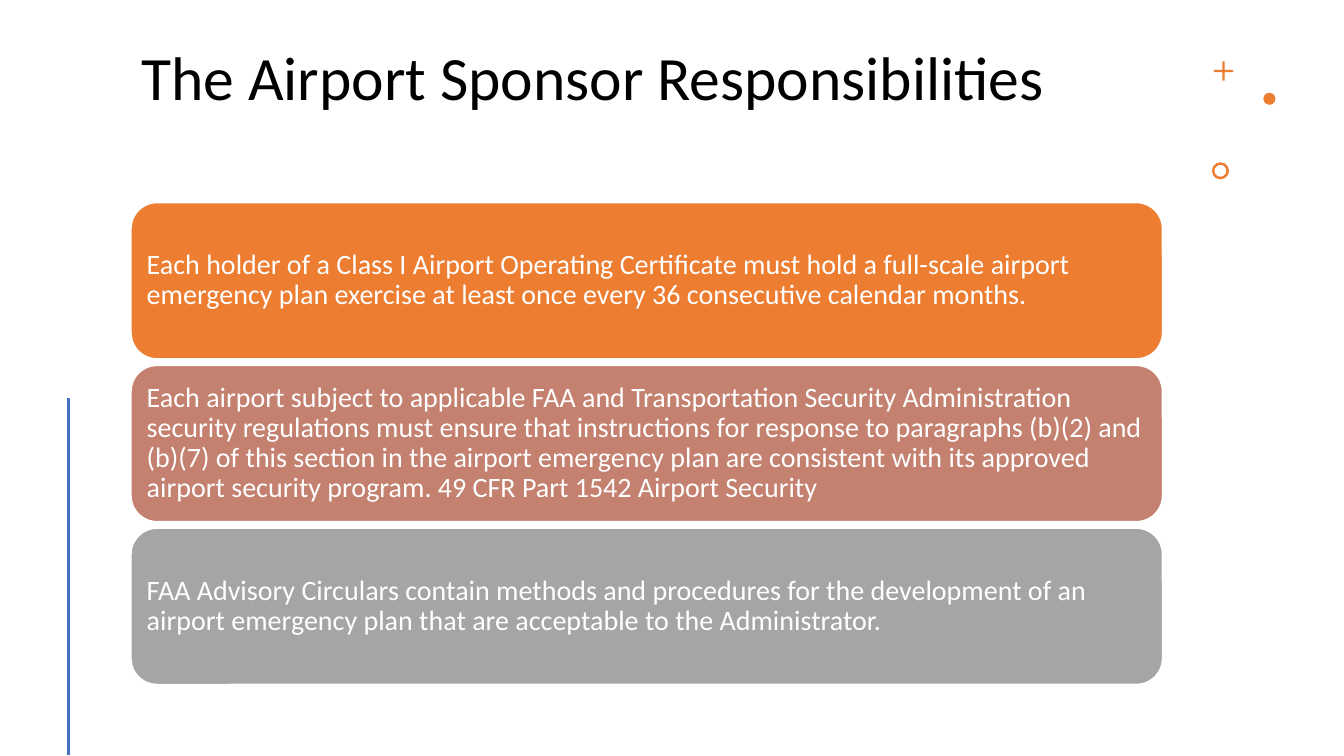
"""Build the airport sponsor responsibilities slide."""
from lxml import etree
from pptx import Presentation
from pptx.dml.color import RGBColor
from pptx.enum.shapes import MSO_CONNECTOR, MSO_SHAPE
from pptx.enum.text import MSO_ANCHOR, MSO_AUTO_SIZE, PP_ALIGN
from pptx.oxml.ns import qn
from pptx.util import Inches, Pt

CROSS, OVAL, DONUT = MSO_SHAPE.CROSS, MSO_SHAPE.OVAL, MSO_SHAPE.DONUT
CARD = MSO_SHAPE.ROUNDED_RECTANGLE
STRAIGHT = MSO_CONNECTOR.STRAIGHT
TOP, MIDDLE = MSO_ANCHOR.TOP, MSO_ANCHOR.MIDDLE
LEFT = PP_ALIGN.LEFT
NO_FIT = MSO_AUTO_SIZE.NONE

COLORS = {
    "black": "000000",
    "white": "FFFFFF",
    "orange": "ED7D31",
    "rose": "C48170",
    "gray": "A5A5A5",
    "blue": "4472C4",
}


def rgb(name):
    return RGBColor.from_string(COLORS[name])


def write(shape, text, size, color, anchor):
    tf = shape.text_frame
    tf.word_wrap = True
    tf.auto_size = NO_FIT
    tf.vertical_anchor = anchor
    p = tf.paragraphs[0]
    p.alignment = LEFT
    p.line_spacing = 0.9
    r = p.add_run()
    r.text = text
    r.font.name = "Calibri"
    r.font.size = Pt(size)
    r.font.color.rgb = rgb(color)
    return tf


prs = Presentation()
prs.slide_width, prs.slide_height = Inches(13.33), Inches(7.5)
s = prs.slides.add_slide(prs.slide_layouts[5])

title = s.shapes.title
title.left, title.top = Inches(1.3), Inches(0.42)
title.width, title.height = Inches(10.23), Inches(1.31)
write(title, "The Airport Sponsor Responsibilities", 44, "black", TOP)

ornaments = [
    (CROSS, 12.04, 0.61, 0.19, 0.44),
    (OVAL, 12.53, 0.92, 0.12, None),
    (DONUT, 12.02, 1.61, 0.17, 0.15),
]
for kind, x, y, size, adjustment in ornaments:
    sp = s.shapes.add_shape(kind, Inches(x), Inches(y), Inches(size), Inches(size))
    sp.shadow.inherit = False
    sp.fill.solid()
    sp.fill.fore_color.rgb = rgb("orange")
    sp.line.fill.background()
    if adjustment is not None:
        sp.adjustments[0] = adjustment

rule = s.shapes.add_connector(STRAIGHT, Inches(0.68), Inches(3.95), Inches(0.68), Inches(7.49))
rule.line.color.rgb = rgb("blue")
rule.line.width = Pt(2)
etree.SubElement(rule._element.spPr, qn("a:effectLst"))

cards = [
    ("orange", "Each holder of a Class I Airport Operating Certificate must hold a "
               "full-scale airport emergency plan exercise at least once every 36 "
               "consecutive calendar months."),
    ("rose", "Each airport subject to applicable FAA and Transportation Security "
             "Administration security regulations must ensure that instructions for "
             "response to paragraphs (b)(2) and (b)(7) of this section in the airport "
             "emergency plan are consistent with its approved airport security program. "
             "49 CFR Part 1542 Airport Security"),
    ("gray", "FAA Advisory Circulars contain methods and procedures for the development "
             "of an airport emergency plan that are acceptable to the Administrator."),
]
card_top, card_height, card_pitch = 2.01, 1.55, 1.615
for i, (color, text) in enumerate(cards):
    sp = s.shapes.add_shape(CARD, Inches(1.3), Inches(card_top + i * card_pitch),
                            Inches(10.23), Inches(card_height))
    sp.shadow.inherit = False
    sp.fill.solid()
    sp.fill.fore_color.rgb = rgb(color)
    sp.line.color.rgb = rgb("white")
    sp.line.width = Pt(1)
    tf = write(sp, text, 20, "white", MIDDLE)
    tf.margin_left = tf.margin_right = Inches(0.08)
    tf.margin_top = tf.margin_bottom = Inches(0.08)

prs.save("out.pptx")
